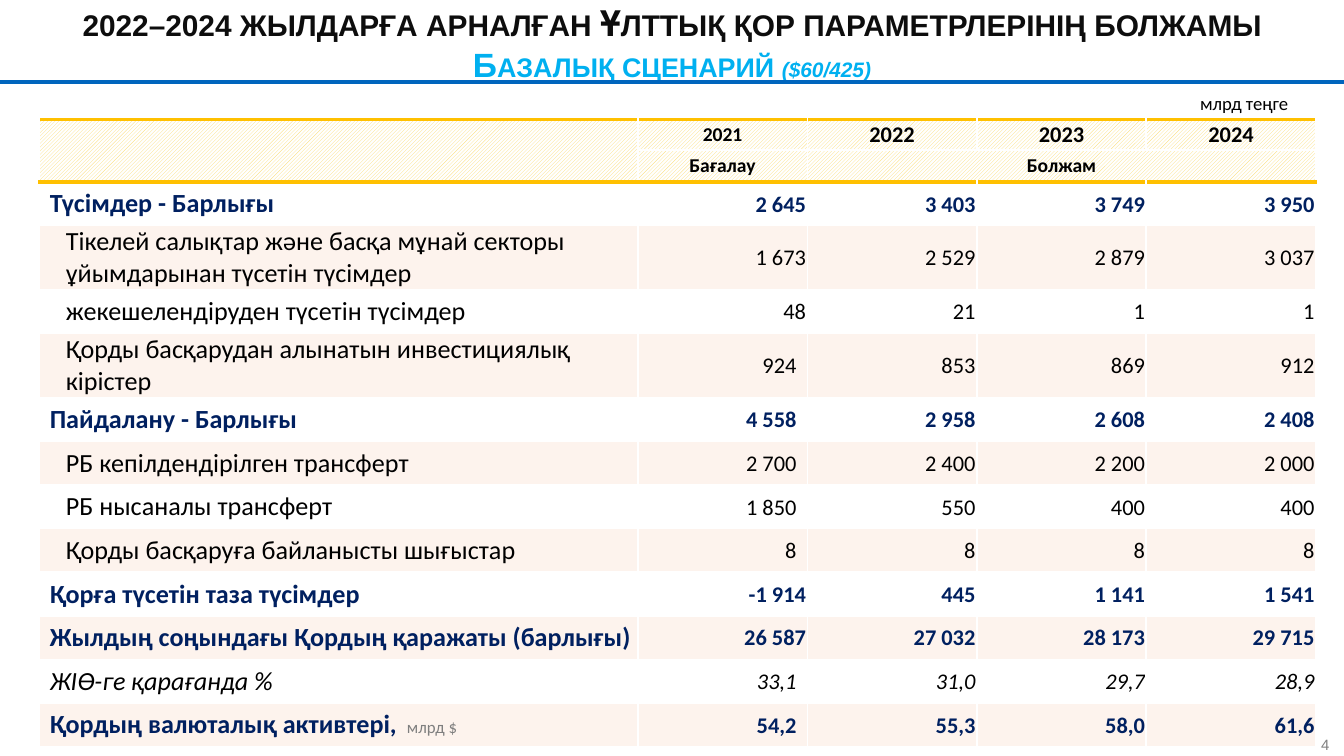
from dataclasses import dataclass

from lxml import etree
from pptx import Presentation
from pptx import util as u
from pptx.dml.color import RGBColor
from pptx.enum import dml, shapes, text
from pptx.oxml.ns import qn

Pt = u.Pt


@dataclass(frozen=True)
class Theme:
    heading_font: str = "Arial"
    body_font: str = "Calibri"
    black: str = "000000"
    white: str = "FFFFFF"
    title: str = "0D0D0D"
    scenario: str = "00B0F0"
    rule: str = "0065BD"
    total: str = "002060"
    gold: str = "FFC000"
    hatch: str = "FBDD76"
    band: str = "FDF3ED"
    page_number: str = "808080"
    unit: str = "7F7F7F"
    title_size: float = 20
    scenario_size: float = 18
    label_size: float = 14
    value_size: float = 12
    header_size: float = 10.5
    note_size: float = 10
    unit_size: float = 9
    page_number_size: float = 8


THEME = Theme()
COLUMNS = [320.8] + [90.8] * 4
HEADER_HEIGHTS = [16.5, 17]
ROW_HEIGHT, TALL_ROW_HEIGHT = 23.4, 34.4
INDENT, NARROW, WIDE = 8.6, 0.7, 5.8
YEARS = ["2021", "2022", "2023", "2024"]

# Label, kind of row, values, right inset of the first value
ROWS = [
    ("Түсімдер - Барлығы", "total", "2 645|3 403|3 749|3 950", NARROW),
    ("Тікелей салықтар және басқа мұнай секторы ұйымдарынан түсетін түсімдер",
     "tall", "1 673|2 529|2 879|3 037", NARROW),
    ("жекешелендіруден түсетін түсімдер", "item", "48|21|1|1", NARROW),
    ("Қорды басқарудан алынатын инвестициялық кірістер",
     "tall", "924|853|869|912", WIDE),
    ("Пайдалану - Барлығы", "total", "4 558|2 958|2 608|2 408", WIDE),
    ("РБ кепілдендірілген трансферт", "item", "2 700|2 400|2 200|2 000", WIDE),
    ("РБ нысаналы трансферт", "item", "1 850|550|400|400", WIDE),
    ("Қорды басқаруға байланысты шығыстар", "item", "8|8|8|8", WIDE),
    ("Қорға түсетін таза түсімдер", "total", "-1 914|445|1 141|1 541", NARROW),
    ("Жылдың соңындағы Қордың қаражаты (барлығы)",
     "total", "26 587|27 032|28 173|29 715", NARROW),
    ("ЖІӨ-ге қарағанда %", "share", "33,1|31,0|29,7|28,9", WIDE),
    ("Қордың валюталық активтері, ", "total", "54,2|55,3|58,0|61,6", WIDE),
]


def color(value):
    return RGBColor.from_string(value)


def write(para, words, size, font=THEME.body_font, ink=THEME.black,
          bold=False, italic=False, small_caps=False, align=None):
    """Add one formatted span to a paragraph."""
    if align is not None:
        para.alignment = align
    span = para.add_run()
    span.text = words
    span.font.size = Pt(size)
    span.font.name = font
    span.font.bold = bold
    span.font.italic = italic
    span.font.color.rgb = color(ink)
    if small_caps:
        span.font._element.set("cap", "small")


def add_title(page, left, top, width, height):
    box = page.shapes.title
    box.left, box.top, box.width, box.height = map(Pt, (left, top, width, height))
    frame = box.text_frame
    frame.auto_size = text.MSO_AUTO_SIZE.NONE
    frame.vertical_anchor = text.MSO_ANCHOR.TOP
    style = dict(font=THEME.heading_font, bold=True, small_caps=True,
                 align=text.PP_ALIGN.CENTER)
    write(frame.paragraphs[0],
          "2022–2024 жылдарға арналған Ұлттық қор параметрлерінің болжамы",
          THEME.title_size, ink=THEME.title, **style)
    para = frame.add_paragraph()
    write(para, "Базалық сценарий ", THEME.scenario_size, ink=THEME.scenario, **style)
    write(para, "($60/425)", THEME.label_size, ink=THEME.scenario, italic=True, **style)


def add_rule(page, left, top, width):
    line = page.shapes.add_connector(shapes.MSO_CONNECTOR.STRAIGHT,
                                     Pt(left), Pt(top), Pt(left + width), Pt(top))
    line.line.color.rgb = color(THEME.rule)
    line.line.width = Pt(2.25)
    etree.SubElement(line._element.spPr, qn("a:effectLst"))


def add_note(page, left, top, width, height, words, size, wrap=False, inset=None, **style):
    frame = page.shapes.add_textbox(Pt(left), Pt(top), Pt(width), Pt(height)).text_frame
    frame.word_wrap = wrap
    if inset is not None:
        frame.margin_left = frame.margin_right = Pt(inset)
        frame.margin_top = frame.margin_bottom = Pt(inset)
        frame.vertical_anchor = text.MSO_ANCHOR.MIDDLE
    write(frame.paragraphs[0], words, size, **style)


def set_borders(cell, top, bottom):
    """White sides, with gold where the header begins or ends."""
    props = cell._tc.get_or_add_tcPr()
    inks = {"lnL": THEME.white, "lnR": THEME.white, "lnT": top, "lnB": bottom}
    for place, (tag, ink) in enumerate(inks.items()):
        width = Pt(2.25) if ink == THEME.gold else Pt(1)
        line = etree.Element(qn(f"a:{tag}"), w=str(int(width)))
        fill = etree.SubElement(line, qn("a:solidFill"))
        etree.SubElement(fill, qn("a:srgbClr"), val=ink)
        props.insert(place, line)


def set_margins(cell, left=0, top=0, right=0):
    cell.vertical_anchor = text.MSO_ANCHOR.MIDDLE
    cell.margin_left, cell.margin_top = Pt(left), Pt(top)
    cell.margin_right, cell.margin_bottom = Pt(right), 0


def fill_header(table):
    center = text.PP_ALIGN.CENTER
    for row in range(2):
        for column in range(len(COLUMNS)):
            cell = table.cell(row, column)
            set_margins(cell)
            cell.fill.patterned()
            cell.fill.pattern = dml.MSO_PATTERN.LIGHT_UPWARD_DIAGONAL
            cell.fill.fore_color.rgb = color(THEME.hatch)
            cell.fill.back_color.rgb = color(THEME.white)
            set_borders(cell, THEME.white if row else THEME.gold,
                        THEME.gold if row or column == 0 else THEME.white)
            # Keeps empty cells from stretching the header
            end = cell.text_frame.paragraphs[0]._p.get_or_add_endParaRPr()
            end.set("sz", str(int(THEME.header_size * 100)))
    labels = [(0, i, year) for i, year in enumerate(YEARS, 1)]
    labels += [(1, 1, "Бағалау"), (1, 2, "Болжам")]
    for row, column, words in labels:
        size = THEME.value_size if row == 0 and column > 1 else THEME.header_size
        write(table.cell(row, column).text_frame.paragraphs[0], words, size,
              bold=True, align=center)
    table.cell(0, 0).merge(table.cell(1, 0))
    table.cell(1, 2).merge(table.cell(1, 4))


def fill_row(table, index, label, kind, values, first_inset):
    total = kind == "total"
    style = dict(ink=THEME.total if total else THEME.black, bold=total,
                 italic=kind == "share")
    row = index + len(HEADER_HEIGHTS)
    for column, words in enumerate([label] + values.split("|")):
        cell = table.cell(row, column)
        para = cell.text_frame.paragraphs[0]
        if column == 0:
            set_margins(cell, left=5.8)
            write(para, words, THEME.label_size, **style)
            if kind in ("item", "tall"):
                para._p.get_or_add_pPr().set("marL", str(int(Pt(INDENT))))
        else:
            set_margins(cell, NARROW, NARROW, first_inset if column == 1 else NARROW)
            write(para, words, THEME.value_size, align=text.PP_ALIGN.RIGHT, **style)
        if index % 2:
            cell.fill.solid()
            cell.fill.fore_color.rgb = color(THEME.band)
        else:
            cell.fill.background()
        set_borders(cell, THEME.white if index else THEME.gold, THEME.white)


def add_fund_table(page, left, top):
    heights = HEADER_HEIGHTS + [
        TALL_ROW_HEIGHT if row[1] == "tall" else ROW_HEIGHT for row in ROWS]
    table = page.shapes.add_table(len(heights), len(COLUMNS), Pt(left), Pt(top),
                                  Pt(sum(COLUMNS)), Pt(sum(heights))).table
    table.first_row = table.horz_banding = False
    for column, width in zip(table.columns, COLUMNS):
        column.width = Pt(width)
    for row, height in zip(table.rows, heights):
        row.height = Pt(height)
    fill_header(table)
    for index, row in enumerate(ROWS):
        fill_row(table, index, *row)
    # Unit after the last label
    write(table.cell(len(heights) - 1, 0).text_frame.paragraphs[0], " млрд $",
          THEME.unit_size, ink=THEME.unit)


def main():
    deck = Presentation()
    deck.slide_width, deck.slide_height = Pt(720), Pt(405)
    page = deck.slides.add_slide(deck.slide_layouts[5])
    add_note(page, 697, 392.4, 26, 13, "4", THEME.page_number_size, wrap=True, inset=0,
             font=THEME.heading_font, ink=THEME.page_number, align=text.PP_ALIGN.CENTER)
    add_rule(page, 0, 44, 720)
    add_fund_table(page, 20.9, 64)
    add_title(page, 0, -4.3, 720, 53.3)
    add_note(page, 635.8, 45.4, 62.6, 19.4, "млрд теңге", THEME.note_size)
    deck.save("out.pptx")


if __name__ == "__main__":
    main()
